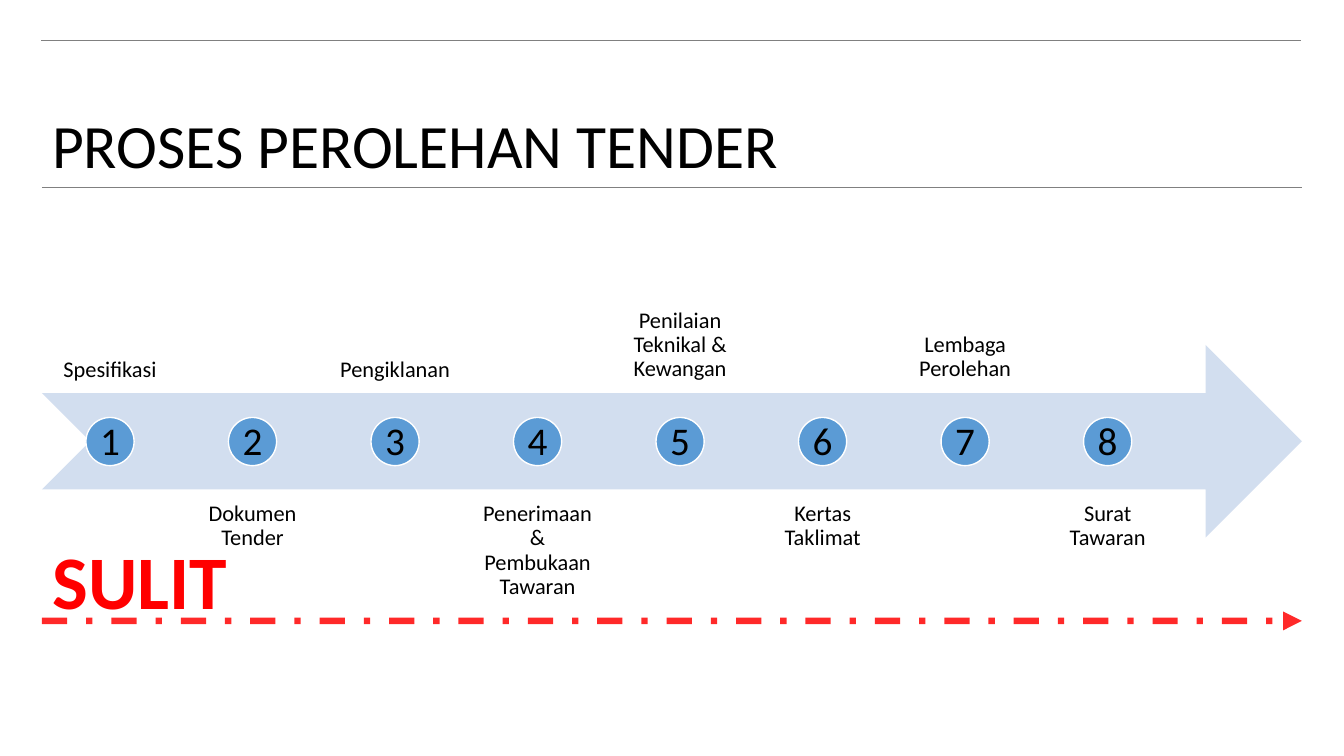
from dataclasses import dataclass

from lxml import etree
from pptx import Presentation
from pptx.dml.color import RGBColor
from pptx.enum.dml import MSO_LINE
from pptx.enum.shapes import MSO_CONNECTOR, MSO_SHAPE
from pptx.enum.text import MSO_ANCHOR, PP_ALIGN
from pptx.oxml.ns import qn
from pptx.util import Pt

ARROW = MSO_SHAPE.NOTCHED_RIGHT_ARROW
OVAL = MSO_SHAPE.OVAL
STRAIGHT = MSO_CONNECTOR.STRAIGHT
DASH = MSO_LINE.DASH_DOT
TOP = MSO_ANCHOR.TOP
BOTTOM = MSO_ANCHOR.BOTTOM
LEFT = PP_ALIGN.LEFT
CENTER = PP_ALIGN.CENTER

FONT = "Calibri"
HEX = {
    "ink": "000000",
    "rule": "808080",
    "band": "D2DEEF",
    "dot": "5B9BD5",
    "edge": "FFFFFF",
    "alert": "FF0000",
}
EDGE = 30
WIDE = 900
STEP = 101.8
LABEL = 97.2
DOT = 34.4
MID = 315.4


@dataclass(frozen=True)
class Box:
    left: float
    top: float
    width: float
    height: float

    def spot(self) -> tuple:
        return Pt(self.left), Pt(self.top), Pt(self.width), Pt(self.height)


@dataclass(frozen=True)
class Style:
    size: float
    color: str = "ink"
    bold: bool = False
    align: PP_ALIGN = CENTER
    anchor: MSO_ANCHOR = TOP
    wrap: bool = False
    pad: float = 0
    pitch: float = 1.0


def tone(name: str) -> RGBColor:
    return RGBColor.from_string(HEX[name])


def write(shape, text: str, style: Style):
    frame = shape.text_frame
    frame.word_wrap = style.wrap
    frame.vertical_anchor = style.anchor
    if style.pad:
        frame.margin_left = frame.margin_right = Pt(style.pad)
        frame.margin_top = frame.margin_bottom = Pt(style.pad)
    para = frame.paragraphs[0]
    para.alignment = style.align
    para.line_spacing = style.pitch
    para.space_before = Pt(0)
    run = para.add_run()
    run.text = text
    run.font.name = FONT
    run.font.size = Pt(style.size)
    run.font.bold = style.bold
    run.font.color.rgb = tone(style.color)
    return run


def add_text(slide, box: Box, text: str, style: Style):
    return write(slide.shapes.add_textbox(*box.spot()), text, style)


def add_form(slide, kind: MSO_SHAPE, box: Box, fill: str, edge: str = "") -> None:
    form = slide.shapes.add_shape(kind, *box.spot())
    form.shadow.inherit = False
    form.fill.solid()
    form.fill.fore_color.rgb = tone(fill)
    if edge:
        form.line.color.rgb = tone(edge)
        form.line.width = Pt(1)
    else:
        form.line.fill.background()


def add_rule(slide, left: float, top: float, color: str, width: float):
    rule = slide.shapes.add_connector(
        STRAIGHT, Pt(left), Pt(top), Pt(left + WIDE), Pt(top)
    )
    rule.line.color.rgb = tone(color)
    rule.line.width = Pt(width)
    etree.SubElement(rule._element.spPr, qn("a:effectLst"))
    return rule


def add_track(slide) -> None:
    track = add_rule(slide, EDGE, 443.5, "alert", 4.5)
    track.line.dash_style = DASH
    line = track._element.spPr.find(qn("a:ln"))
    etree.SubElement(line, qn("a:tailEnd"), type="triangle")
    color = line.find(qn("a:solidFill")).find(qn("a:srgbClr"))
    etree.SubElement(color, qn("a:alpha"), val="83000")


def add_stroke(run, color: str, width: float) -> None:
    line = etree.Element(qn("a:ln"), w=str(Pt(width)))
    fill = etree.SubElement(line, qn("a:solidFill"))
    etree.SubElement(fill, qn("a:srgbClr"), val=HEX[color])
    run.font._element.insert(0, line)


STAGES = (
    "Spesifikasi",
    "Dokumen Tender",
    "Pengiklanan",
    "Penerimaan & Pembukaan Tawaran",
    "Penilaian Teknikal & Kewangan",
    "Kertas Taklimat",
    "Lembaga Perolehan",
    "Surat Tawaran",
)
HIGH = Style(16, anchor=BOTTOM, wrap=True, pad=8.96, pitch=0.9)
LOW = Style(16, wrap=True, pad=8.96, pitch=0.9)
COUNT = Style(28)


def main() -> None:
    deck = Presentation()
    deck.slide_width = Pt(960)
    deck.slide_height = Pt(540)
    slide = deck.slides.add_slide(deck.slide_layouts[5])

    add_rule(slide, EDGE, 133.8, "rule", 1)
    add_rule(slide, EDGE - 0.5, 28.8, "rule", 1)

    title = slide.shapes.title
    title.left, title.top, title.width, title.height = Box(
        EDGE, 28.8, WIDE, 104.4
    ).spot()
    write(
        title,
        "PROSES PEROLEHAN TENDER",
        Style(44, align=LEFT, anchor=BOTTOM, pitch=0.9),
    )

    add_form(slide, ARROW, Box(EDGE, 246.4, WIDE, 137.6), "band")
    for index, stage in enumerate(STAGES):
        left = EDGE + index * STEP
        mid = left + LABEL / 2
        top, style = (350, LOW) if index % 2 else (144, HIGH)
        add_text(slide, Box(left, top, LABEL, 137.6), stage, style)
        dot = Box(mid - DOT / 2, MID - DOT / 2, DOT, DOT)
        add_form(slide, OVAL, dot, "dot", "edge")
        count = Box(mid - 14.4, 293.8, 28.8, 41)
        add_text(slide, count, str(index + 1), COUNT)

    secret = add_text(
        slide, Box(EDGE, 378, 140.4, 72.7), "SULIT", Style(54, "alert", True)
    )
    add_stroke(secret, "alert", 1.75)
    add_track(slide)
    deck.save("out.pptx")


if __name__ == "__main__":
    main()
